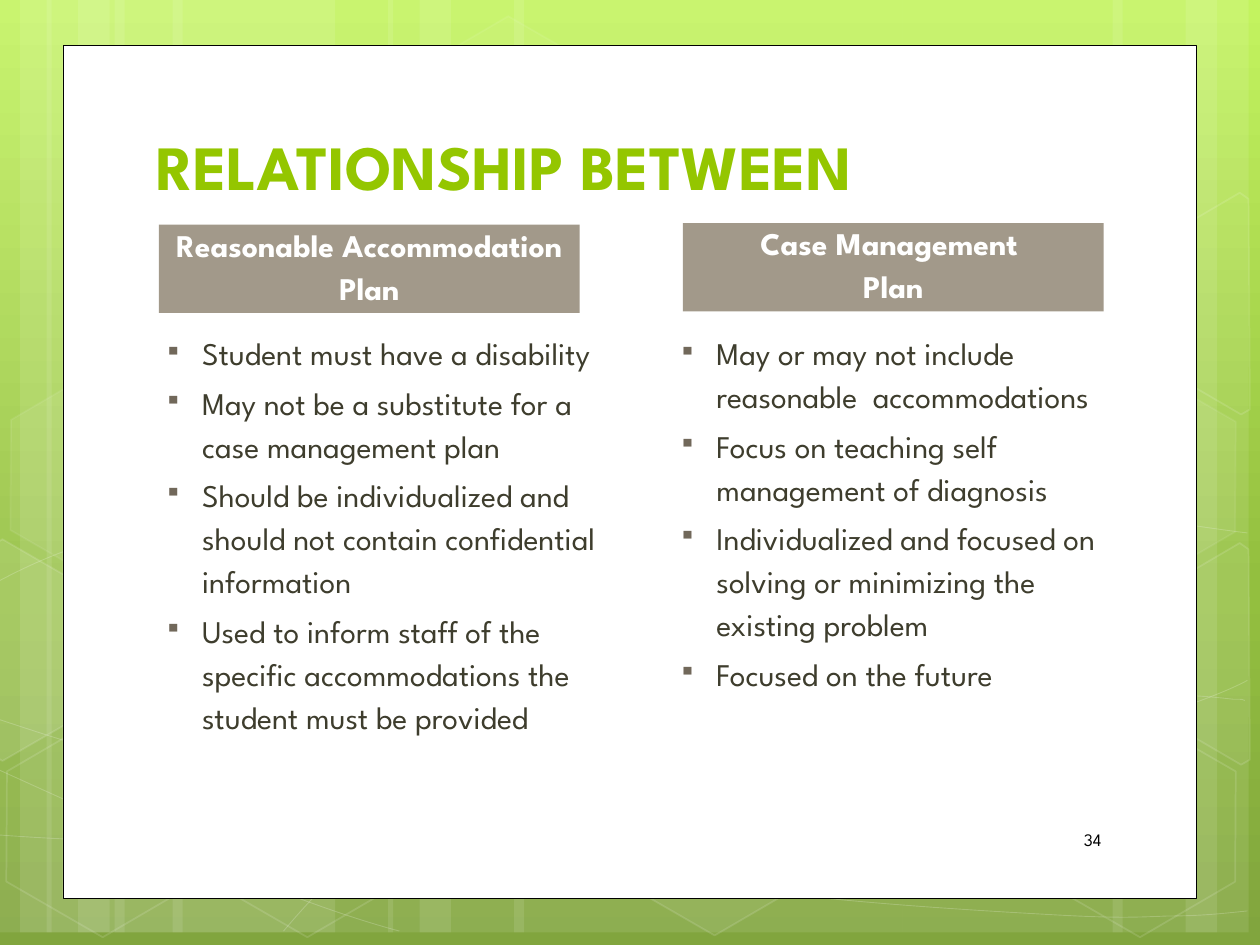
from dataclasses import dataclass
from typing import NamedTuple

from lxml import etree
from pptx import Presentation
from pptx.dml.color import RGBColor
from pptx.enum.shapes import MSO_SHAPE
from pptx.enum.text import MSO_ANCHOR, PP_ALIGN
from pptx.oxml.ns import qn
from pptx.util import Emu, Inches, Pt

RECT, HEX = MSO_SHAPE.RECTANGLE, MSO_SHAPE.HEXAGON
TOP, MID, BASE = MSO_ANCHOR.TOP, MSO_ANCHOR.MIDDLE, MSO_ANCHOR.BOTTOM
LEFT, CENTER, RIGHT = PP_ALIGN.LEFT, PP_ALIGN.CENTER, PP_ALIGN.RIGHT
COLS, ROWS, CELL = 100, 75, Inches(0.1)


@dataclass(frozen=True)
class Theme:
    font: str = "League Spartan"
    white: str = "FFFFFF"
    black: str = "000000"
    lime: str = "94C600"
    taupe: str = "A2998A"
    ink: str = "3E3D2D"
    mark: str = "71685A"
    sky: tuple = ((0, "C3F35F"), (62, "93BF3F"), (100, "81A53E"))
    title: float = 36
    body: float = 18
    small: float = 10
    lead: float = 1.14
    gap: float = 3.6


class Box(NamedTuple):
    x: float
    y: float
    w: float
    h: float


class Look(NamedTuple):
    fill: str | None = None
    clear: int = 100
    line: str | None = None
    width: float = 1
    faint: int = 100


class Style(NamedTuple):
    size: float
    color: str
    bold: bool = False
    align: PP_ALIGN = LEFT
    lead: float = 1
    gap: float = 0
    mark: bool = False


class Hexa(NamedTuple):
    col: float
    row: float
    fill: int = 0
    line: int = 12


class Column(NamedTuple):
    head: Box
    lines: tuple
    gap: float
    list: Box
    points: tuple


T = Theme()
HEXAS = (Hexa(3.99, -1.98, 4, 8), Hexa(6.03, 1.99, 6), Hexa(-0.04, 2),
         Hexa(0, 0, 7, 8), Hexa(0.99, 1), Hexa(1.99, 2), Hexa(1.01, -1),
         Hexa(10.25, 2), Hexa(10.25, 0.01, 7, 8))
CURVES = (
    ((-1, 66.2), (4.4, 66.6), (9.8, 66.9), (17.3, 66.7), (24.8, 66.6),
     (34, 66.5), (44, 65.4), (54.1, 64.4), (68.3, 62.5), (77.4, 60.6),
     (86.6, 58.7), (95.9, 55.7), (99, 54)),
    ((-1, 46.6), (1.8, 45.1), (4.7, 43.6), (10.4, 42.1), (16.1, 40.6),
     (24.1, 38.4), (33, 37.7), (41.9, 36.9), (52.6, 36.9), (63.6, 37.7),
     (74.6, 38.4), (93, 41.6), (99, 42.3)),
    ((-1.2, 60.6), (10.9, 66.1), (23, 71.6), (31.7, 73.9)),
    ((-1, 56.8), (2.1, 57.8), (5.2, 58.9), (11, 60.5), (16.9, 62.1),
     (25.6, 64.5), (33.9, 66.2), (42.2, 67.9), (52.8, 69.7), (61, 70.8),
     (69.3, 71.8), (78.2, 72.3), (83.5, 72.6), (88.8, 72.9), (90.2, 72.8),
     (92.7, 72.7), (95.3, 72.7), (97.1, 72.5), (99, 72.3)),
    ((22.5, 73.9), (24.2, 71.9), (26, 69.9), (28.4, 68), (30.9, 66.2),
     (34.2, 64.2), (37, 62.9), (39.8, 61.5), (41.5, 60.9), (45.2, 59.9),
     (48.9, 58.9), (55.6, 57.4), (59.1, 56.8), (62.6, 56.1), (63.1, 56.1),
     (66.2, 55.8), (69.3, 55.6), (74.2, 55.3), (77.7, 55.2), (81.1, 55.1),
     (86.9, 55.2), (86.9, 55.2), (89.1, 55.2), (91.3, 55.2), (93.5, 55.2),
     (95.4, 55.2), (97, 55.4), (97.9, 55.5), (98.8, 55.5), (98.5, 55.5),
     (98.8, 55.6)),
)
WEST = ((-0.9, 43.5), (0.2, 42.8), (7.8, 47.2), (7.8, 56), (0.2, 60.4),
        (-0.9, 59.7))
EAST = ((90.9, 47.5), (98.4, 43.1), (99.1, 43.6), (99.2, 60.3), (98.5, 60.7),
        (90.8, 56.2))
COLUMNS = (
    Column(Box(12.62, 17.84, 33.4, 7), ("Reasonable Accommodation Plan",),
           T.gap, Box(11.26, 25.63, 37.8, 43.9),
           ("Student must have a disability",
            "May not be a substitute for a case management plan",
            "Should be individualized and should not contain confidential "
            "information",
            "Used to inform staff of the specific accommodations the student "
            "must be provided")),
    Column(Box(54.2, 17.72, 33.4, 7), ("Case Management ", "Plan"), 0,
           Box(52.08, 25.63, 36.8, 41.5),
           ("May or may not include reasonable  accommodations",
            "Focus on teaching self management of diagnosis",
            "Individualized and focused on solving or minimizing the existing "
            "problem",
            "Focused on the future")),
)


def cells(n: float) -> Emu:
    return Emu(round(n * CELL))


def node(root, tag: str, **attrs: str):
    return etree.SubElement(root, qn(tag), attrs)


def tint(part, hue: str, share: int) -> None:
    part.solid()
    part.fore_color.rgb = RGBColor.from_string(hue)
    if share < 100:
        tone = part._xPr.find(qn("a:solidFill"))[0]
        node(tone, "a:alpha", val=str(share * 1000))


def dress(shape, look: Look) -> None:
    shape.shadow.inherit = False
    if look.fill:
        tint(shape.fill, look.fill, look.clear)
    else:
        shape.fill.background()
    if look.line:
        tint(shape.line.fill, look.line, look.faint)
        shape.line.width = Pt(look.width)
    else:
        shape.line.fill.background()


def block(slide, box: Box, look: Look, kind=RECT):
    shape = slide.shapes.add_shape(kind, *map(cells, box))
    dress(shape, look)
    return shape


def trace(slide, dots, look: Look, close: bool = False):
    pts = [(cells(x), cells(y)) for x, y in dots]
    pen = slide.shapes.build_freeform(*pts[0], scale=1.0)
    pen.add_line_segments(pts[1:], close=close)
    shape = pen.convert_to_shape()
    dress(shape, look)
    return shape


def bend(shape) -> None:
    legs = list(shape._element.iter(qn("a:lnTo")))
    route = legs[0].getparent()
    for i in range(0, len(legs), 3):
        curve = node(route, "a:cubicBezTo")
        for leg in legs[i:i + 3]:
            curve.append(leg[0])
            route.remove(leg)


def write(shape, lines, style: Style, anchor=TOP) -> None:
    frame = shape.text_frame
    frame.word_wrap = True
    frame.vertical_anchor = anchor
    for i, line in enumerate(lines):
        para = frame.add_paragraph() if i else frame.paragraphs[0]
        para.alignment = style.align
        para.line_spacing = style.lead
        para.space_before = Pt(style.gap)
        if style.mark:
            props = para._p.get_or_add_pPr()
            props.set("marL", str(cells(3.8)))
            props.set("indent", str(cells(-3)))
            node(node(props, "a:buClr"), "a:srgbClr", val=T.mark)
            node(props, "a:buSzPct", val="76000")
            node(props, "a:buChar", char="▪")
        run = para.add_run()
        run.text = line
        font = run.font
        font.name, font.size, font.bold = T.font, Pt(style.size), style.bold
        font.color.rgb = RGBColor.from_string(style.color)


def label(slide, box: Box, lines, style: Style, anchor=TOP) -> None:
    write(slide.shapes.add_textbox(*map(cells, box)), lines, style, anchor)


def bars(slide, edge: float, wide: float = 17.5, flip: bool = False) -> None:
    for step, width in ((10, wide), (0, 5), (2.5, 8.3)):
        x = edge - step - width if flip else edge + step
        block(slide, Box(x, -1, width, ROWS), Look(T.white, 10))


def scene(slide) -> None:
    fill = slide.background.fill
    fill.gradient()
    fill.gradient_angle = 270
    stops = slide._element.find(".//" + qn("a:gsLst"))
    stops.clear()
    for pos, hue in T.sky:
        node(node(stops, "a:gs", pos=str(pos * 1000)), "a:srgbClr", val=hue)
    bars(slide, -0.9)
    bars(slide, 3.7)
    bars(slide, 99.1, flip=True)
    bars(slide, 30.8, 30.8)
    for curve in CURVES:
        bend(trace(slide, curve, Look(line=T.white, width=0.5, faint=20)))
    for h in HEXAS:
        box = Box(8 * h.col - 0.3, 13.95 * h.row + 30.1, 17.5, 15.2)
        look = Look(T.white if h.fill else None, h.fill, T.white, 1, h.line)
        shape = block(slide, box, look, HEX)
        shape.adjustments[0] = 0.285
        shape.rotation = 30
    edge = Look(line=T.white, faint=12)
    trace(slide, WEST, edge._replace(fill=T.white, clear=10), True)
    trace(slide, EAST, edge._replace(fill=T.white, clear=4), True)
    trace(slide, [(x, y - 27.8) for x, y in EAST], edge, True)
    block(slide, Box(5, 3.6, 90, 67.7), Look(T.white, line=T.black, width=0.5))


def main() -> None:
    deck = Presentation()
    deck.slide_width, deck.slide_height = cells(COLS), cells(ROWS)
    slide = deck.slides.add_slide(deck.slide_layouts[6])
    scene(slide)
    label(slide, Box(11.4, 5.4, 76.8, 11.2), ("RELATIONSHIP BETWEEN",),
          Style(T.title, T.lime, True), BASE)
    for col in COLUMNS:
        write(block(slide, col.head, Look(T.taupe)), col.lines,
              Style(T.body, T.white, True, CENTER, T.lead, col.gap), BASE)
        label(slide, col.list, col.points,
              Style(T.body, T.ink, lead=T.lead, gap=T.gap, mark=True))
    label(slide, Box(72.8, 64.8, 15.6, 3.7), ("34",),
          Style(T.small, T.black, align=RIGHT), MID)
    deck.save("out.pptx")


if __name__ == "__main__":
    main()
